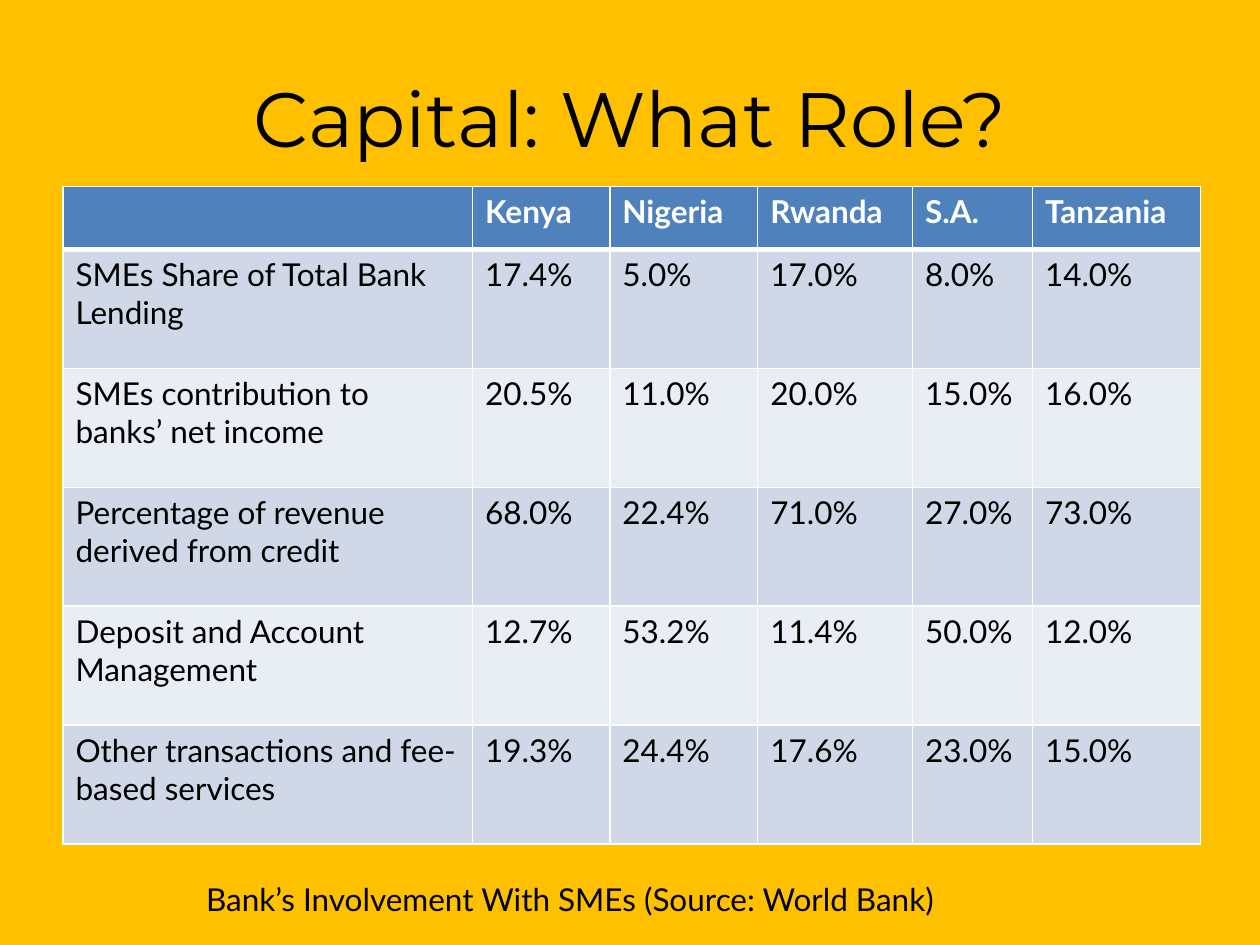
"""Build a slide with a table of bank involvement with SMEs in five countries."""
from lxml.etree import SubElement
from pptx import Presentation
from pptx.dml.color import RGBColor
from pptx.enum.text import MSO_ANCHOR, MSO_AUTO_SIZE, PP_ALIGN
from pptx.oxml.ns import qn
from pptx.util import Pt

COLORS = {
    "background": "FFC000",
    "header": "4F81BD",
    "odd": "D0D8E8",
    "even": "E9EDF4",
    "light": "FFFFFF",
    "dark": "000000",
}
ROWS = [
    ["", "Kenya", "Nigeria", "Rwanda", "S.A.", "Tanzania"],
    ["SMEs Share of Total Bank Lending", "17.4%", "5.0%", "17.0%", "8.0%", "14.0%"],
    ["SMEs contribution to banks’ net income", "20.5%", "11.0%", "20.0%", "15.0%", "16.0%"],
    ["Percentage of revenue derived from credit", "68.0%", "22.4%", "71.0%", "27.0%", "73.0%"],
    ["Deposit and Account Management", "12.7%", "53.2%", "11.4%", "50.0%", "12.0%"],
    ["Other transactions and fee-based services", "19.3%", "24.4%", "17.6%", "23.0%", "15.0%"],
]
COLUMN_WIDTHS = [234, 78.5, 84.5, 88.5, 68.5, 96]
HEADER_HEIGHT, ROW_HEIGHT = 36, 68


def add_text(paragraph, text, size, font_name, color, bold=False):
    run = paragraph.add_run()
    run.text = text
    run.font.size = Pt(size)
    run.font.name = font_name
    run.font.bold = bold
    run.font.color.rgb = RGBColor.from_string(COLORS[color])


def add_border(cell, side, width):
    line = SubElement(cell._tc.get_or_add_tcPr(), qn(f"a:ln{side}"), w=str(Pt(width)))
    fill = SubElement(line, qn("a:solidFill"))
    SubElement(fill, qn("a:srgbClr"), val=COLORS["light"])


presentation = Presentation()
presentation.slide_width, presentation.slide_height = Pt(720), Pt(540)
slide = presentation.slides.add_slide(presentation.slide_layouts[5])
slide.background.fill.solid()
slide.background.fill.fore_color.rgb = RGBColor.from_string(COLORS["background"])

title = slide.shapes.title
title.left, title.top, title.width, title.height = Pt(36), Pt(21.6), Pt(648), Pt(90)
title.text_frame.vertical_anchor = MSO_ANCHOR.MIDDLE
title_paragraph = title.text_frame.paragraphs[0]
title_paragraph.alignment = PP_ALIGN.CENTER
add_text(title_paragraph, "Capital: What Role?", 44, "Montserrat", "dark")

caption = slide.shapes.add_textbox(Pt(106.5), Pt(499.5), Pt(438.5), Pt(29))
caption.text_frame.word_wrap = True
caption.text_frame.auto_size = MSO_AUTO_SIZE.SHAPE_TO_FIT_TEXT
caption_paragraph = caption.text_frame.paragraphs[0]
caption_paragraph.alignment = PP_ALIGN.CENTER
add_text(caption_paragraph, "Bank’s Involvement With SMEs (Source: World Bank)", 18, "Lato", "dark")

table_height = HEADER_HEIGHT + ROW_HEIGHT * (len(ROWS) - 1)
table = slide.shapes.add_table(
    len(ROWS), len(COLUMN_WIDTHS), Pt(36), Pt(106.5), Pt(sum(COLUMN_WIDTHS)), Pt(table_height)
).table
for column, width in zip(table.columns, COLUMN_WIDTHS):
    column.width = Pt(width)

for row_index, texts in enumerate(ROWS):
    is_header = row_index == 0
    table.rows[row_index].height = Pt(HEADER_HEIGHT if is_header else ROW_HEIGHT)
    fill_name = "header" if is_header else "odd" if row_index % 2 else "even"
    border_widths = {"L": 1, "R": 1, "T": 3 if row_index == 1 else 1, "B": 3 if is_header else 1}
    for column_index, text in enumerate(texts):
        cell = table.cell(row_index, column_index)
        for side, width in border_widths.items():
            add_border(cell, side, width)
        cell.fill.solid()
        cell.fill.fore_color.rgb = RGBColor.from_string(COLORS[fill_name])
        if text:
            text_color = "light" if is_header else "dark"
            add_text(cell.text_frame.paragraphs[0], text, 18, "Lato", text_color, is_header)

presentation.save("out.pptx")
